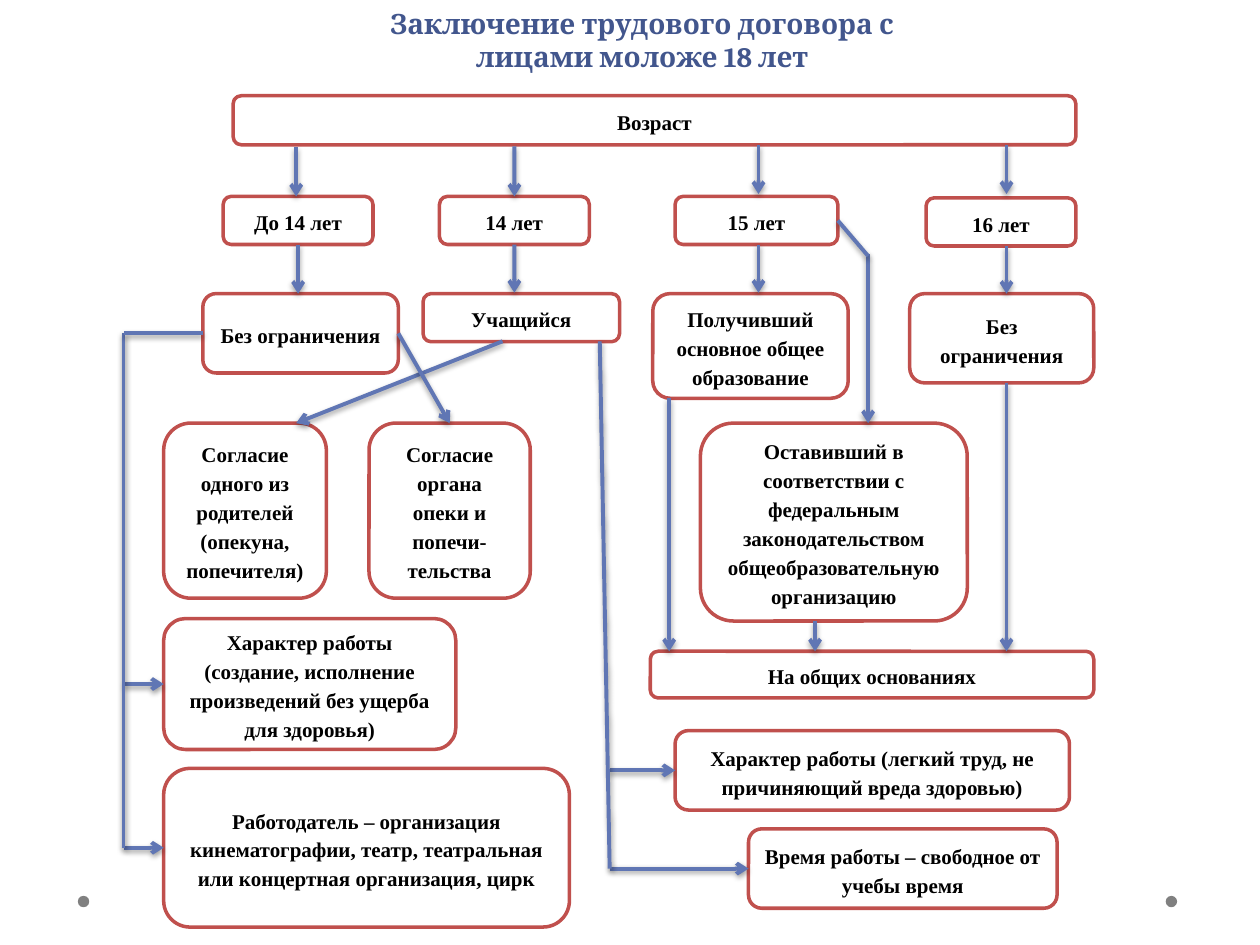
from lxml import etree
from pptx import Presentation
from pptx.dml.color import RGBColor
from pptx.enum.shapes import MSO_CONNECTOR, MSO_SHAPE
from pptx.enum.text import MSO_ANCHOR, MSO_AUTO_SIZE, PP_ALIGN
from pptx.oxml import parse_xml
from pptx.oxml.ns import nsdecls, qn
from pptx.util import Cm, Pt

ROUNDED, OVAL = MSO_SHAPE.ROUNDED_RECTANGLE, MSO_SHAPE.OVAL
STRAIGHT = MSO_CONNECTOR.STRAIGHT
TOP, LEFT, BOTTOM, RIGHT = range(4)
TITLE_ONLY = 5

COLORS = {
    "title": "42568D",
    "text": "000000",
    "box": "FFFFFF",
    "border": "C0504D",
    "arrow": "6076B4",
    "dot": "808080",
}

TITLE = "Заключение трудового договора с лицами моложе 18 лет"

# name: (text, left, top, width, height) in centimetres
BOXES = {
    "age": ("Возраст", 4.7, 1.93, 16.99, 0.99),
    "under 14": ("До 14 лет", 4.5, 3.96, 3.02, 0.97),
    "14": ("14 лет", 8.86, 3.96, 3.02, 0.97),
    "15": ("15 лет", 13.61, 3.96, 3.28, 0.97),
    "16": ("16 лет", 18.67, 3.99, 3.02, 0.97),
    "child": ("Без ограничения", 4.09, 5.92, 3.94, 1.6),
    "pupil": ("Учащийся", 8.53, 5.92, 3.96, 0.97),
    "graduate": ("Получивший основное общее образование", 13.16, 5.92, 3.94, 2.11),
    "adult": ("Без ограничения", 18.34, 5.92, 3.71, 1.8),
    "leaver": ("Оставивший в соответствии с федеральным законодательством "
               "общеобразовательную организацию", 14.12, 8.53, 5.38, 3.99),
    "common": ("На общих основаниях", 13.11, 13.13, 8.94, 0.94),
    "light work": ("Характер работы (легкий труд, не причиняющий вреда здоровью)",
                   13.61, 14.73, 7.95, 1.6),
    "free time": ("Время работы – свободное от учебы время", 15.09, 16.71, 6.22, 1.6),
    "parent": ("Согласие одного из родителей (опекуна, попечителя)",
               3.3, 8.53, 3.28, 3.53),
    "guardian": ("Согласие органа опеки и попечи-тельства", 7.44, 8.53, 3.25, 3.53),
    "work": ("Характер работы (создание, исполнение произведений без ущерба "
             "для здоровья)", 3.3, 12.47, 5.89, 2.64),
    "employer": ("Работодатель – организация кинематографии, театр, театральная "
                 "или концертная организация, цирк", 3.3, 15.49, 8.18, 3.2),
}

# An end is either (x, y) in centimetres or (box name, side).
ARROWS = [
    ((5.97, 2.97), (5.97, 3.96)),
    ((10.37, 2.95), ("14", TOP)),
    ((15.29, 2.92), (15.29, 3.91)),
    ((20.29, 2.92), (20.29, 3.91)),
    (("under 14", BOTTOM), (6.01, 5.92)),
    (("14", BOTTOM), (10.37, 5.9)),
    ((15.29, 4.93), (15.29, 5.9)),
    ((20.29, 4.96), (20.29, 5.92)),
    ((17.5, 5.13), (17.5, 8.53)),
    ((10.13, 6.88), (5.97, 8.53)),
    (("child", RIGHT), ("guardian", TOP)),
    ((13.49, 8.03), (13.49, 13.13)),
    ((16.43, 12.52), (16.43, 13.13)),
    ((20.29, 7.72), (20.29, 13.13)),
    ((12.29, 17.51), ("free time", LEFT)),
    ((12.29, 15.53), ("light work", LEFT)),
    ((2.49, 13.79), ("work", LEFT)),
    ((2.49, 17.09), ("employer", LEFT)),
]
PLAIN_LINES = [
    (("15", RIGHT), (17.5, 5.16)),
    ((12.09, 6.88), (12.29, 17.51)),
    ((2.49, 6.72), (2.49, 17.09)),
    (("child", LEFT), (2.49, 6.72)),
]
DOT_LEFTS, DOT_TOP, DOT_SIZE = (1.57, 23.5), 18.06, 0.23

FONTS = {
    "title": {"name": "Cambria", "size": Pt(16), "bold": True},
    "text": {"name": "Times New Roman", "size": Pt(12), "bold": True},
}
BOX_PARAGRAPH = {"alignment": PP_ALIGN.CENTER, "line_spacing": 1.15, "space_after": Pt(10)}
SHADOW_XML = (
    f'<a:effectLst {nsdecls("a")}><a:outerShdw blurRad="40000" dist="20000" '
    'dir="5400000" rotWithShape="0"><a:srgbClr val="000000"><a:alpha val="38000"/>'
    "</a:srgbClr></a:outerShdw></a:effectLst>"
)


def color(name):
    return RGBColor.from_string(COLORS[name])


def set_attributes(target, values):
    for name, value in values.items():
        setattr(target, name, value)


def write(text_frame, text, style, paragraph_format):
    text_frame.word_wrap = True
    paragraph = text_frame.paragraphs[0]
    set_attributes(paragraph, paragraph_format)
    run = paragraph.add_run()
    run.text = text
    set_attributes(run.font, FONTS[style])
    run.font.color.rgb = color(style)


def add_filled_shape(slide, preset, position, fill):
    shape = slide.shapes.add_shape(preset, *map(Cm, position))
    shape.shadow.inherit = False
    shape.fill.solid()
    shape.fill.fore_color.rgb = color(fill)
    return shape


def add_box(slide, text, *position):
    shape = add_filled_shape(slide, ROUNDED, position, "box")
    shape.line.color.rgb = color("border")
    shape.line.width = Pt(2)
    shape.text_frame.vertical_anchor = MSO_ANCHOR.MIDDLE
    write(shape.text_frame, text, "text", BOX_PARAGRAPH)
    return shape


def locate(end):
    """Turn a line end into centimetre coordinates."""
    if end[0] not in BOXES:
        return end
    name, side = end
    _, left, top, width, height = BOXES[name]
    across, down = {TOP: (0.5, 0), LEFT: (0, 0.5), BOTTOM: (0.5, 1), RIGHT: (1, 0.5)}[side]
    return left + width * across, top + height * down


def add_line(slide, shapes, start, finish, arrow):
    connector = slide.shapes.add_connector(STRAIGHT, *map(Cm, locate(start) + locate(finish)))
    for end, connect in ((start, connector.begin_connect), (finish, connector.end_connect)):
        if end[0] in shapes:
            connect(shapes[end[0]], end[1])
    connector.line.color.rgb = color("arrow")
    connector.line.width = Pt(2.25)
    if arrow:
        etree.SubElement(connector.line._get_or_add_ln(), qn("a:tailEnd"), type="arrow")
    connector._element.spPr.append(parse_xml(SHADOW_XML))


def add_title(slide):
    title = slide.shapes.title
    set_attributes(title, {"left": Cm(6.6), "top": Cm(0), "width": Cm(12.7), "height": Cm(1.63)})
    title.text_frame.auto_size = MSO_AUTO_SIZE.NONE
    title.text_frame.vertical_anchor = MSO_ANCHOR.TOP
    write(title.text_frame, TITLE, "title", {"alignment": PP_ALIGN.CENTER})


def main():
    presentation = Presentation()
    presentation.slide_width, presentation.slide_height = Cm(25.4), Cm(19.05)
    slide = presentation.slides.add_slide(presentation.slide_layouts[TITLE_ONLY])
    add_title(slide)
    for left in DOT_LEFTS:
        dot = add_filled_shape(slide, OVAL, (left, DOT_TOP, DOT_SIZE, DOT_SIZE), "dot")
        dot.line.fill.background()
    shapes = {name: add_box(slide, *box) for name, box in BOXES.items()}
    for lines, arrow in ((ARROWS, True), (PLAIN_LINES, False)):
        for start, finish in lines:
            add_line(slide, shapes, start, finish, arrow)
    presentation.save("out.pptx")


if __name__ == "__main__":
    main()
